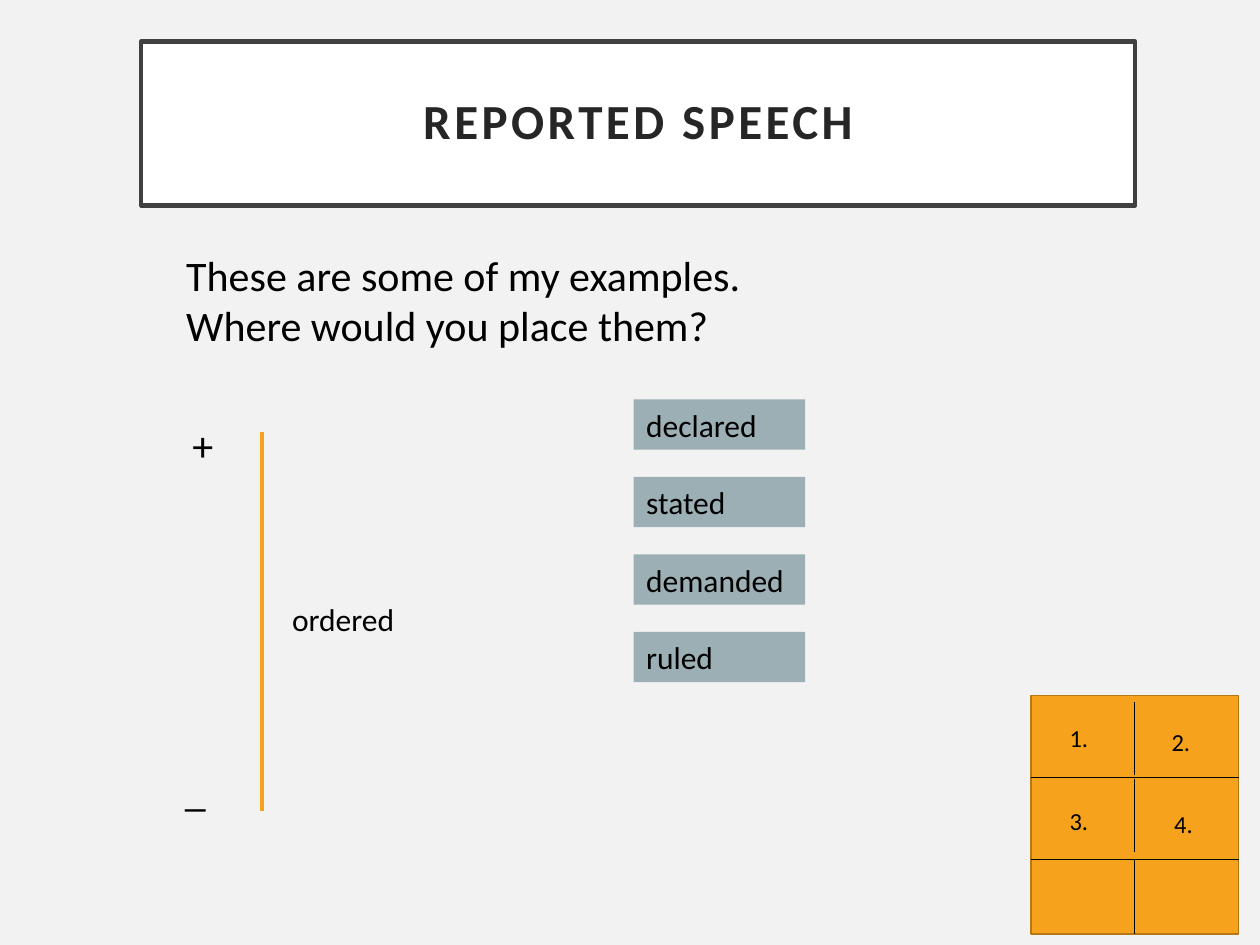
from lxml import etree
from pptx import Presentation
from pptx import util as u
from pptx.dml.color import RGBColor
from pptx.enum import shapes, text
from pptx.oxml.ns import qn

COLOURS = {
    "background": "F2F2F2", "title fill": "FFFFFF", "title line": "404040",
    "title text": "262626", "ink": "000000", "orange": "F6A21D",
    "board line": "B67815", "card": "9BAFB5",
}
COLOURS = {part: RGBColor.from_string(value) for part, value in COLOURS.items()}

deck = Presentation()
deck.slide_width, deck.slide_height = u.Inches(10), u.Inches(7.5)
slide = deck.slides.add_slide(deck.slide_layouts[5])
slide.background.fill.solid()
slide.background.fill.fore_color.rgb = COLOURS["background"]


def write(box, words, size, colour="ink", align=text.PP_ALIGN.LEFT, bold=False):
    frame = box.text_frame
    frame.word_wrap = True
    paragraph = frame.paragraphs[0]
    paragraph.alignment = align
    run = paragraph.add_run()
    run.text = words
    look = {"name": "Calibri", "size": u.Pt(size), "bold": bold}
    for attribute, value in look.items():
        setattr(run.font, attribute, value)
    run.font.color.rgb = COLOURS[colour]
    return run


def rule(start, end, colour, width):
    line = slide.shapes.add_connector(
        shapes.MSO_CONNECTOR.STRAIGHT, *map(u.Inches, (*start, *end)))
    line.line.color.rgb = COLOURS[colour]
    line.line.width = u.Pt(width)
    etree.SubElement(line._element.spPr, qn("a:effectLst"))
    return line


# Title
title = slide.shapes.title
place = {"left": 1.12, "top": 0.33, "width": 7.89, "height": 1.3}
for side, length in place.items():
    setattr(title, side, u.Inches(length))
title.fill.solid()
title.fill.fore_color.rgb = COLOURS["title fill"]
title.line.color.rgb = COLOURS["title line"]
title.line.width = u.Pt(2.5)
for side in ("left", "top", "right", "bottom"):
    setattr(title.text_frame, f"margin_{side}", u.Inches(0.2))
title.text_frame.vertical_anchor = text.MSO_ANCHOR.MIDDLE
heading = write(title, "REPORTED SPEECH", 28, "title text", text.PP_ALIGN.CENTER, True)
heading._r.get_or_add_rPr().set("spc", "200")
title.text_frame.paragraphs[0].line_spacing = 0.9

# Numbered board: two columns, three rows
board_left, board_top, board_width, board_height = 8.18, 5.52, 1.65, 1.89
row = 0.65
middle = board_left + board_width / 2
board = slide.shapes.add_shape(
    shapes.MSO_SHAPE.RECTANGLE,
    *map(u.Inches, (board_left, board_top, board_width, board_height)))
board.shadow.inherit = False
board.fill.solid()
board.fill.fore_color.rgb = COLOURS["orange"]
board.line.color.rgb = COLOURS["board line"]
board.line.width = u.Pt(1)
for index in (1, 2):
    y = board_top + index * row
    rule((board_left, y), (board_left + board_width, y), "ink", 0.5)
for top, bottom in ((5.57, 6.15), (6.18, 6.76)):
    rule((middle, top), (middle, bottom), "ink", 0.5)
last_divider = rule((middle, board_top + 2 * row),
                    (middle, board_top + board_height), "ink", 0.5)
last_divider.end_connect(board, 2)

# Strength scale
rule((2.08, 3.43), (2.08, 6.44), "orange", 2.25)

centre, left = text.PP_ALIGN.CENTER, text.PP_ALIGN.LEFT
labels = [
    ("These are some of my examples. Where would you place them?",
     (1.38, 1.93, 5.54, 0.91), 24, left),
    ("+", (1.28, 3.28, 0.66, 0.5), 24, centre),
    ("_", (1.22, 6.02, 0.66, 0.5), 24, centre),
    ("ordered", (2.22, 4.71, 1.87, 0.4), 18, left),
    ("1.", (8.39, 5.69, 0.5, 0.34), 14, left),
    ("2.", (9.2, 5.72, 0.5, 0.34), 14, left),
    ("3.", (8.39, 6.35, 0.5, 0.34), 14, left),
    ("4.", (9.22, 6.37, 0.5, 0.34), 14, left),
]
for words, area, size, align in labels:
    write(slide.shapes.add_textbox(*map(u.Inches, area)), words, size, align=align)

# Verbs to place on the scale
for index, verb in enumerate(("declared", "stated", "demanded", "ruled")):
    card = slide.shapes.add_textbox(
        *map(u.Inches, (5.03, 3.17 + index * 0.615, 1.36, 0.4)))
    card.fill.solid()
    card.fill.fore_color.rgb = COLOURS["card"]
    write(card, verb, 18)

deck.save("out.pptx")
